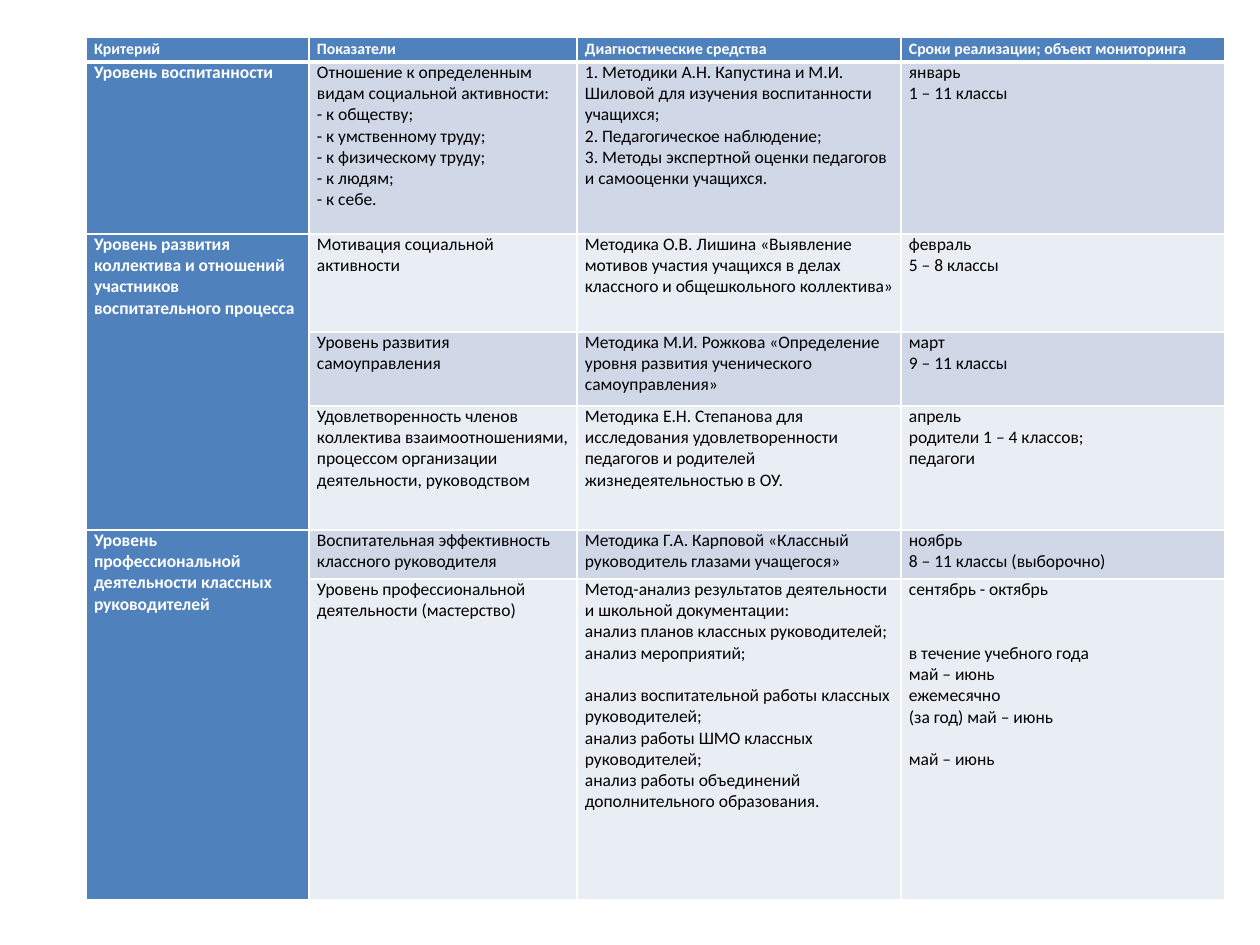
import pptx
import pptx.util
import pptx.dml.color
import pptx.enum.text
import pptx.oxml
import pptx.oxml.ns

# Content: a cell is a list of lines; (text, n) leaves n lines free above the text
HEAD = ["Критерий", "Показатели", "Диагностические средства",
        "Сроки реализации; объект мониторинга"]
GROUPS = [
    ("Уровень воспитанности", [
        (["Отношение к определенным видам социальной активности:",
          "- к обществу;", "- к умственному труду;", "- к физическому труду;",
          "- к людям;", "- к себе."],
         ["1. Методики А.Н. Капустина и М.И. Шиловой для изучения воспитанности учащихся;",
          "2. Педагогическое наблюдение;",
          "3. Методы экспертной оценки педагогов и самооценки учащихся."],
         ["январь", "1 – 11 классы"]),
    ]),
    ("Уровень развития коллектива и отношений участников воспитательного процесса", [
        (["Мотивация социальной активности"],
         ["Методика О.В. Лишина «Выявление мотивов участия учащихся в делах "
          "классного и общешкольного коллектива»"],
         ["февраль", "5 – 8 классы"]),
        (["Уровень развития самоуправления"],
         ["Методика М.И. Рожкова «Определение уровня развития ученического "
          "самоуправления»"],
         ["март", "9 – 11 классы"]),
        (["Удовлетворенность членов коллектива взаимоотношениями, процессом "
          "организации деятельности, руководством"],
         ["Методика Е.Н. Степанова для исследования удовлетворенности педагогов "
          "и родителей жизнедеятельностью в ОУ."],
         ["апрель", "родители 1 – 4 классов;", "педагоги"]),
    ]),
    ("Уровень профессиональной деятельности классных руководителей", [
        (["Воспитательная эффективность классного руководителя"],
         ["Методика Г.А. Карповой «Классный руководитель глазами учащегося»"],
         ["ноябрь", "8 – 11 классы (выборочно)"]),
        (["Уровень профессиональной деятельности (мастерство)"],
         ["Метод-анализ результатов деятельности и школьной документации:",
          "анализ планов классных руководителей;", "анализ мероприятий;",
          ("анализ воспитательной работы классных руководителей;", 1),
          "анализ работы ШМО классных руководителей;",
          "анализ работы объединений дополнительного образования."],
         ["сентябрь - октябрь", ("в течение учебного года", 2), "май – июнь",
          "ежемесячно", "(за год) май – июнь", ("май – июнь", 1)]),
    ]),
]

THEME = {"font": "Calibri", "head": 9, "body": 10, "line": 12.2,
         "blue": "4F81BD", "bands": ("D0D8E8", "E9EDF4"),
         "white": "FFFFFF", "black": "000000"}

# Geometry in px
PX = 914400 // 126
LEFT, TOP, PAD = 86, 37, 8
COLS = [223, 268, 324, 324]
ROWS = [25, 172, 98, 74, 124, 49, 321]


def px(n):
    return pptx.util.Emu(n * PX)


def rgb(code):
    return pptx.dml.color.RGBColor.from_string(code)


def edge(cell, thick=None):
    """White cell borders: 1 pt, and 3 pt on the thick side."""
    props = cell._tc.get_or_add_tcPr()
    for i, side in enumerate("LRTB"):
        width = pptx.util.Pt(3 if side == thick else 1)
        props.insert(i, pptx.oxml.parse_xml(
            f'<a:ln{side} {pptx.oxml.ns.nsdecls("a")} w="{width}"><a:solidFill>'
            f'<a:srgbClr val="{THEME["white"]}"/></a:solidFill></a:ln{side}>'))


def style(cell, fill, thick=None):
    cell.fill.solid()
    cell.fill.fore_color.rgb = rgb(fill)
    cell.margin_left = cell.margin_right = px(PAD)
    cell.margin_top = cell.margin_bottom = 0
    edge(cell, thick)


def write(cell, lines, size, color, bold):
    frame = cell.text_frame
    for i, line in enumerate(lines):
        text, gap = line if isinstance(line, tuple) else (line, 0)
        para = frame.add_paragraph() if i else frame.paragraphs[0]
        if gap:
            para.space_before = pptx.util.Pt(gap * THEME["line"])
        run = para.add_run()
        run.text = text
        run.font.name = THEME["font"]
        run.font.size = pptx.util.Pt(size)
        run.font.bold = bold
        run.font.color.rgb = rgb(color)


def main():
    deck = pptx.Presentation()
    deck.slide_width, deck.slide_height = px(1260), px(945)
    slide = deck.slides.add_slide(deck.slide_layouts[6])

    # Table grid
    table = slide.shapes.add_table(len(ROWS), len(COLS), px(LEFT), px(TOP),
                                   px(sum(COLS)), px(sum(ROWS))).table
    for col, width in zip(table.columns, COLS):
        col.width = px(width)
    for row, height in zip(table.rows, ROWS):
        row.height = px(height)

    # Header row
    for c, name in enumerate(HEAD):
        cell = table.cell(0, c)
        style(cell, THEME["blue"], "B")
        write(cell, [name], THEME["head"], THEME["white"], True)
        para = cell.text_frame.paragraphs[0]
        para.alignment = pptx.enum.text.PP_ALIGN.JUSTIFY
        para.line_spacing = 1.15

    # Criteria, each spanning its rows
    r = 1
    for title, items in GROUPS:
        first = table.cell(r, 0)
        write(first, [title], THEME["body"], THEME["white"], True)
        if len(items) > 1:
            first.merge(table.cell(r + len(items) - 1, 0))
        for item in items:
            thick = "T" if r == 1 else None
            style(table.cell(r, 0), THEME["blue"], thick)
            for c, lines in enumerate(item, 1):
                style(table.cell(r, c), THEME["bands"][(r - 1) % 2], thick)
                write(table.cell(r, c), lines, THEME["body"], THEME["black"], False)
            r += 1

    deck.save("out.pptx")


if __name__ == "__main__":
    main()
